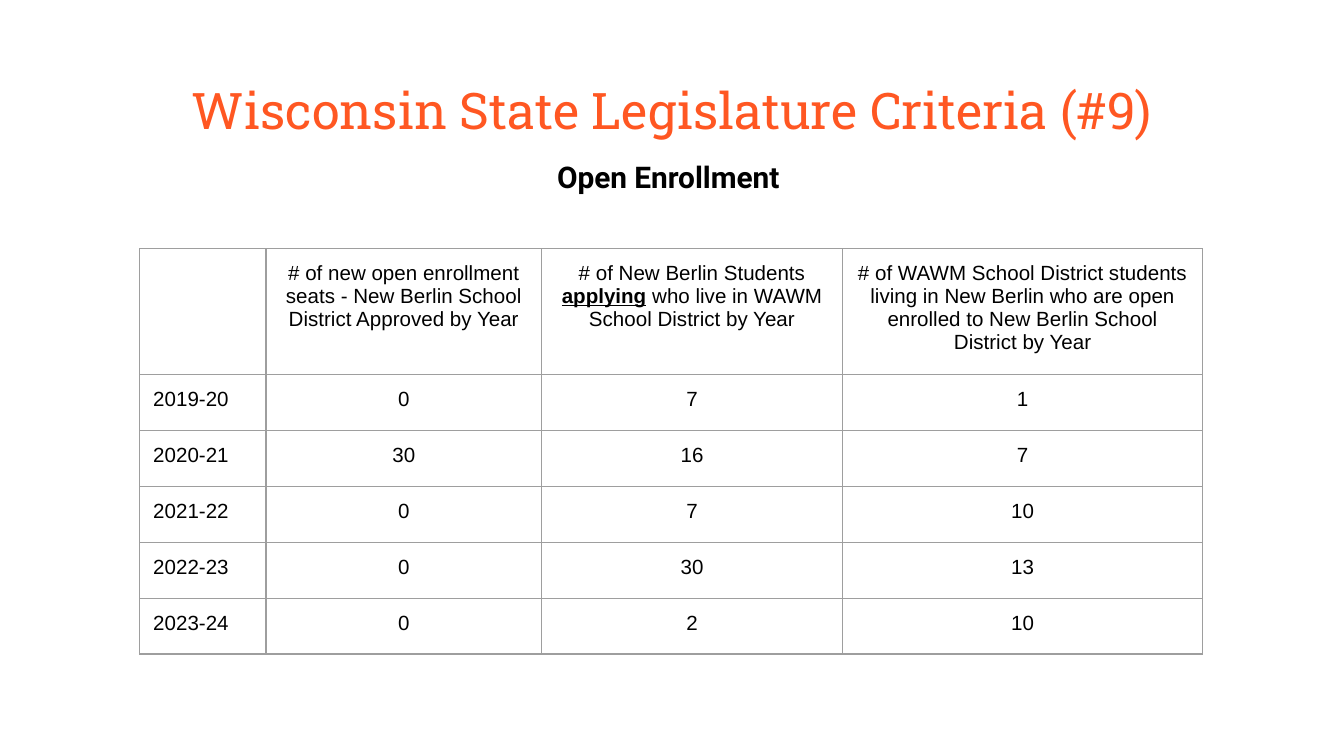
from lxml import etree
from pptx import Presentation
from pptx.dml.color import RGBColor
from pptx.enum.text import MSO_ANCHOR, PP_ALIGN
from pptx.oxml.ns import qn
from pptx.util import Inches, Pt

TOP = MSO_ANCHOR.TOP
LEFT, CENTER = PP_ALIGN.LEFT, PP_ALIGN.CENTER

COLORS = {"heading": "FF5722", "text": "000000", "border": "9E9E9E"}
SLIDE_SIZE = {"slide_width": Inches(10), "slide_height": Inches(10 * 9 / 16)}
INSET = Inches(0.1)
MARGINS = {
    "margin_left": INSET,
    "margin_right": INSET,
    "margin_top": INSET,
    "margin_bottom": INSET,
    "vertical_anchor": TOP,
}
HEADING_FONT = {"name": "Roboto Slab", "size": Pt(27)}
SUBHEADING_FONT = {"name": "Roboto", "size": Pt(16), "bold": True}
TABLE_FONT = {"name": "Arial", "size": Pt(11)}
EMPHASIS = {"bold": True, "underline": True}
SUBHEADING_SPACING = {"line_spacing": 1.15, "space_after": Pt(12)}

COLUMN_WIDTHS = [0.94, 2.05, 2.24, 2.68]
ROW_HEIGHT = 2.5 / 6
HEADERS = [
    [],
    [("# of new open enrollment seats - New Berlin School District Approved by Year", {})],
    [
        ("# of New Berlin Students ", {}),
        ("applying", EMPHASIS),
        (" who live in WAWM School District by Year", {}),
    ],
    [("# of WAWM School District students living in New Berlin who are open "
      "enrolled to New Berlin School District by Year", {})],
]
ENROLLMENT = [
    ("2019-20", 0, 7, 1),
    ("2020-21", 30, 16, 7),
    ("2021-22", 0, 7, 10),
    ("2022-23", 0, 30, 13),
    ("2023-24", 0, 2, 10),
]


def apply_format(target, values):
    for attribute, value in values.items():
        setattr(target, attribute, value)


def write_runs(paragraph, pieces, font, color, align):
    paragraph.alignment = align
    apply_format(paragraph.font, font)
    for text, emphasis in pieces:
        run = paragraph.add_run()
        run.text = text
        apply_format(run.font, font | emphasis)
        run.font.color.rgb = RGBColor.from_string(COLORS[color])


def add_heading(slide, top, height, text, font, color, spacing):
    box = slide.shapes.add_textbox(Inches(0.34), Inches(top), Inches(9.32), Inches(height))
    frame = box.text_frame
    apply_format(frame, MARGINS | {"word_wrap": True})
    paragraph = frame.paragraphs[0]
    apply_format(paragraph, spacing)
    write_runs(paragraph, [(text, {})], font, color, CENTER)


def add_borders(cell):
    properties = cell._tc.get_or_add_tcPr()
    for position, side in enumerate(("a:lnL", "a:lnR", "a:lnT", "a:lnB")):
        line = etree.Element(qn(side), w=str(Pt(0.75)))
        fill = etree.SubElement(line, qn("a:solidFill"))
        etree.SubElement(fill, qn("a:srgbClr"), val=COLORS["border"])
        properties.insert(position, line)


def fill_cell(cell, pieces, align):
    apply_format(cell, MARGINS)
    cell.fill.background()
    add_borders(cell)
    write_runs(cell.text_frame.paragraphs[0], pieces, TABLE_FONT, "text", align)


def add_enrollment_table(slide):
    rows = [HEADERS] + [[[(str(value), {})] for value in year] for year in ENROLLMENT]
    table = slide.shapes.add_table(
        len(rows), len(COLUMN_WIDTHS), Inches(1.04), Inches(1.85),
        Inches(sum(COLUMN_WIDTHS)), Inches(ROW_HEIGHT * len(rows)),
    ).table
    apply_format(table, {"first_row": False, "horz_banding": False})
    for column, width in zip(table.columns, COLUMN_WIDTHS):
        column.width = Inches(width)
    for row, contents in zip(table.rows, rows):
        row.height = Inches(ROW_HEIGHT)
        for index, (cell, pieces) in enumerate(zip(row.cells, contents)):
            fill_cell(cell, pieces, CENTER if index else LEFT)


def main():
    deck = Presentation()
    apply_format(deck, SLIDE_SIZE)
    slide = deck.slides.add_slide(deck.slide_layouts[6])
    add_heading(slide, 0.49, 0.63, "Wisconsin State Legislature Criteria (#9)",
                HEADING_FONT, "heading", {})
    add_heading(slide, 1.04, 0.56, "Open Enrollment ",
                SUBHEADING_FONT, "text", SUBHEADING_SPACING)
    add_enrollment_table(slide)
    deck.save("out.pptx")


if __name__ == "__main__":
    main()
